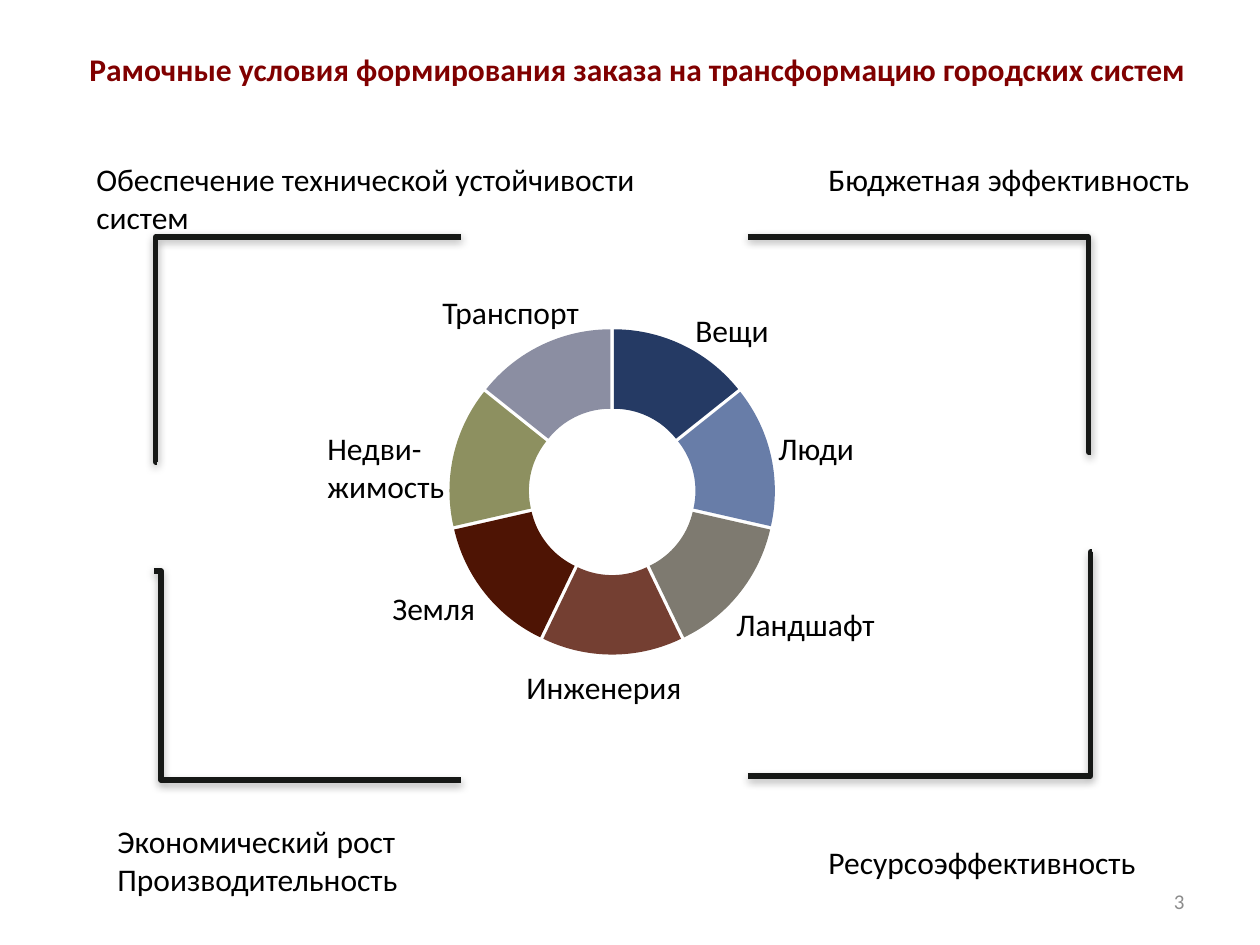
from lxml import etree
from pptx import Presentation
from pptx.chart.data import CategoryChartData
from pptx.dml.color import RGBColor
from pptx.enum.chart import XL_CHART_TYPE
from pptx.enum.shapes import MSO_CONNECTOR
from pptx.enum.text import MSO_ANCHOR, MSO_AUTO_SIZE, PP_ALIGN
from pptx.oxml import parse_xml
from pptx.oxml.ns import nsdecls, qn
from pptx.util import Pt

EMU_PER_PX = 914400 / 126
FONT = "Calibri"
BLACK = RGBColor(0x00, 0x00, 0x00)
MAROON = RGBColor(0x80, 0x00, 0x00)
GREY = RGBColor(0x8C, 0x8C, 0x8C)
BRACKET = RGBColor(0x16, 0x18, 0x16)
RING = [
    RGBColor(0x25, 0x3A, 0x64),
    RGBColor(0x68, 0x7D, 0xA8),
    RGBColor(0x7E, 0x7A, 0x70),
    RGBColor(0x74, 0x3F, 0x32),
    RGBColor(0x4E, 0x14, 0x04),
    RGBColor(0x8D, 0x90, 0x60),
    RGBColor(0x8B, 0x8E, 0xA2),
]

BRACKETS = [
    ((156, 462), (461, 237), -100),
    ((154, 571), (461, 780), 2300),
    ((748, 237), (1091, 452), 99300),
    ((748, 776), (1091, 552), 99900),
]
CONDITIONS = [
    (105, 816, 472, 89, True, ["Экономический рост", "Производительность"]),
    (816, 837, 335, 50, False, ["Ресурсоэффективность"]),
    (84, 154, 592, 89, True, ["Обеспечение технической устойчивости систем"]),
    (816, 154, 512, 50, True, ["Бюджетная эффективность"]),
]
SYSTEMS = [
    (315, 423, 144, 89, False, ["Недви-", "жимость"]),
    (766, 423, 102, 50, False, ["Люди"]),
    (430, 287, 164, 50, False, ["Транспорт"]),
    (724, 599, 165, 50, False, ["Ландшафт"]),
    (514, 662, 183, 50, False, ["Инженерия"]),
    (380, 583, 108, 50, False, ["Земля"]),
    (683, 305, 605, 50, True, ["Вещи"]),
]


def px(*values):
    """Turn pixel lengths into EMU."""
    return [round(v * EMU_PER_PX) for v in values]


def add_label(s, x, y, w, h, wrap, lines, size=18, color=BLACK, bold=False):
    """Add a text box with one paragraph per line and return its frame."""
    tf = s.shapes.add_textbox(*px(x, y, w, h)).text_frame
    tf.word_wrap = wrap
    tf.auto_size = MSO_AUTO_SIZE.SHAPE_TO_FIT_TEXT
    for i, line in enumerate(lines):
        p = tf.paragraphs[0] if i == 0 else tf.add_paragraph()
        r = p.add_run()
        r.text = line
        r.font.name = FONT
        r.font.size = Pt(size)
        r.font.bold = bold
        r.font.color.rgb = color
    return tf


def add_page_number(s, number):
    """Add the right-aligned page number."""
    tf = add_label(s, 903, 876, 294, 50, True, [number], 12, GREY)
    tf.auto_size = MSO_AUTO_SIZE.NONE
    tf.vertical_anchor = MSO_ANCHOR.MIDDLE
    tf.paragraphs[0].alignment = PP_ALIGN.RIGHT


def add_bracket(s, start, end, bend):
    """Add an elbow connector with its bend position and a soft shadow."""
    sp = s.shapes.add_connector(MSO_CONNECTOR.ELBOW, *px(*start, *end))
    sp.line.color.rgb = BRACKET
    sp.line.width = Pt(3)
    sp_pr = sp._element.spPr
    guides = sp_pr.find(qn("a:prstGeom")).get_or_add_avLst()
    etree.SubElement(guides, qn("a:gd"), name="adj1", fmla=f"val {bend}")
    sp_pr.append(parse_xml(
        f'<a:effectLst {nsdecls("a")}><a:outerShdw blurRad="63500" dist="22860" '
        'dir="5400000" rotWithShape="0"><a:srgbClr val="000000">'
        '<a:alpha val="35000"/></a:srgbClr></a:outerShdw></a:effectLst>'))


def set_plot_layout(chart, x, y, w, h):
    """Fix the inner plot area as fractions of the chart."""
    area = chart._chartSpace.chart.plotArea
    for old in area.findall(qn("c:layout")):
        area.remove(old)
    layout = etree.Element(qn("c:layout"))
    manual = etree.SubElement(layout, qn("c:manualLayout"))
    settings = {"layoutTarget": "inner", "xMode": "edge", "yMode": "edge",
                "x": x, "y": y, "w": w, "h": h}
    for tag, value in settings.items():
        etree.SubElement(manual, qn(f"c:{tag}"), val=str(value))
    area.insert(0, layout)


def add_ring(s):
    """Add the doughnut chart of equal city systems."""
    data = CategoryChartData()
    data.categories = [str(i) for i in range(1, len(RING) + 1)]
    data.add_series("Series 1", [14] * len(RING))
    chart = s.shapes.add_chart(
        XL_CHART_TYPE.DOUGHNUT_EXPLODED, *px(350, 297, 552, 433), data).chart
    chart.has_legend = False
    chart.has_title = False
    chart.font.name = FONT
    chart.font.size = Pt(18)
    chart.font.color.rgb = BLACK
    plot = chart.plots[0]
    plot.vary_by_categories = True
    plot._element.find(qn("c:holeSize")).set("val", "22")
    series = plot.series[0]
    for i, color in enumerate(RING):
        fill = series.points[i].format.fill
        fill.solid()
        fill.fore_color.rgb = color
    for explosion in series._element.iter(qn("c:explosion")):
        explosion.set("val", "5")
    set_plot_layout(chart, 0.18, 0, 0.59, 0.9)


def main():
    """Build the slide and save it."""
    prs = Presentation()
    prs.slide_width, prs.slide_height = px(1260, 945)
    s = prs.slides.add_slide(prs.slide_layouts[6])
    for bracket in BRACKETS:
        add_bracket(s, *bracket)
    for condition in CONDITIONS:
        add_label(s, *condition)
    add_page_number(s, "3")
    add_ring(s)
    for system in SYSTEMS:
        add_label(s, *system)
    title = "Рамочные условия формирования заказа на трансформацию городских систем"
    add_label(s, 77, 44, 1131, 50, False, [title], color=MAROON, bold=True)
    prs.save("out.pptx")


if __name__ == "__main__":
    main()
